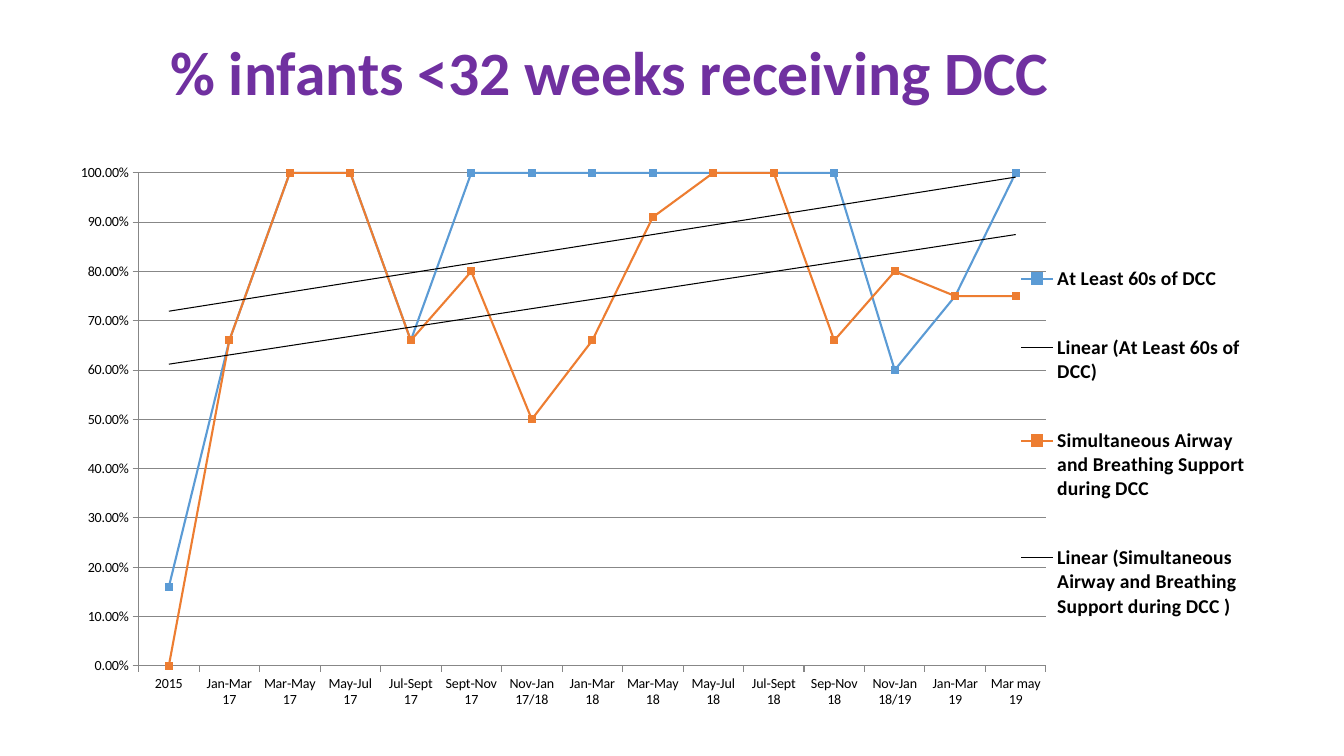
from lxml import etree
from pptx import Presentation
from pptx.chart.data import CategoryChartData
from pptx.dml.color import RGBColor
from pptx.enum.chart import XL_CHART_TYPE as ChartType
from pptx.enum.chart import XL_LEGEND_POSITION as LegendPosition
from pptx.enum.chart import XL_MARKER_STYLE as MarkerStyle
from pptx.enum.chart import XL_TICK_MARK as TickMark
from pptx.enum.text import MSO_ANCHOR as Anchor
from pptx.oxml import parse_xml
from pptx.oxml.ns import nsdecls, qn
from pptx.util import Inches, Pt

FONT = "Calibri"
COLORS = {
    "title": "7030A0",
    "text": "000000",
    "grid": "878787",
    "dcc": "5B9BD5",
    "support": "ED7D31",
}
PERIODS = [
    "2015", "Jan-Mar 17", "Mar-May 17", "May-Jul 17", "Jul-Sept 17",
    "Sept-Nov 17", "Nov-Jan 17/18", "Jan-Mar 18", "Mar-May 18", "May-Jul 18",
    "Jul-Sept 18", "Sep-Nov 18", "Nov-Jan 18/19", "Jan-Mar 19", "Mar may 19",
]
SERIES = [
    ("At Least 60s of DCC", "dcc",
     [0.16, 0.66, 1, 1, 0.66, 1, 1, 1, 1, 1, 1, 1, 0.6, 0.75, 1]),
    ("Simultaneous Airway and Breathing Support during DCC ", "support",
     [0, 0.66, 1, 1, 0.66, 0.8, 0.5, 0.66, 0.91, 1, 1, 0.66, 0.8, 0.75, 0.75]),
]


def color(name):
    return RGBColor.from_string(COLORS[name])


def set_font(font, size, name="text", bold=False):
    font.name = FONT
    font.size = Pt(size)
    font.bold = bold
    font.color.rgb = color(name)


def add_title(page, text):
    title = page.shapes.title
    title.left, title.top = Inches(1.26), Inches(0.36)
    title.width, title.height = Inches(9.58), Inches(0.77)
    title.text_frame.text = text
    title.text_frame.vertical_anchor = Anchor.MIDDLE
    para = title.text_frame.paragraphs[0]
    para.line_spacing = 0.9
    set_font(para.font, 44, "title", True)


def set_layout(element, x, y, width, height, inner=False):
    for old in element.findall(qn("c:layout")):
        element.remove(old)
    layout = etree.Element(qn("c:layout"))
    manual = etree.SubElement(layout, qn("c:manualLayout"))
    settings = [("layoutTarget", "inner")] if inner else []
    settings += [("xMode", "edge"), ("yMode", "edge"),
                 ("x", x), ("y", y), ("w", width), ("h", height)]
    for tag, value in settings:
        etree.SubElement(manual, qn(f"c:{tag}")).set("val", str(value))
    if inner:
        element.insert(0, layout)
    else:
        element.find(qn("c:legendPos")).addnext(layout)


def add_trend(series):
    trend = parse_xml(
        f'<c:trendline {nsdecls("c", "a")}><c:spPr><a:ln w="9525"><a:solidFill>'
        f'<a:srgbClr val="{COLORS["text"]}"/></a:solidFill></a:ln></c:spPr>'
        '<c:trendlineType val="linear"/><c:dispRSqr val="0"/>'
        '<c:dispEq val="0"/></c:trendline>')
    series._element.find(qn("c:cat")).addprevious(trend)


def style_series(series, name):
    series.smooth = False
    series.format.line.color.rgb = color(name)
    series.format.line.width = Pt(1.5)
    marker = series.marker
    marker.style = MarkerStyle.SQUARE
    marker.size = 5
    marker.format.fill.solid()
    marker.format.fill.fore_color.rgb = color(name)
    marker.format.line.color.rgb = color(name)
    add_trend(series)


def style_axis(axis):
    axis.major_tick_mark = TickMark.OUTSIDE
    axis.minor_tick_mark = TickMark.NONE
    axis.format.line.color.rgb = color("grid")
    set_font(axis.tick_labels.font, 10)


def add_line_chart(page):
    data = CategoryChartData(number_format="0.00%")
    data.categories = PERIODS
    for name, _, values in SERIES:
        data.add_series(name, values)
    chart = page.shapes.add_chart(
        ChartType.LINE_MARKERS, Inches(0.55), Inches(1.53),
        Inches(12.5), Inches(5.61), data).chart
    set_font(chart.font, 10)
    chart.has_title = False
    plot = chart.plots[0]
    plot.vary_by_categories = False
    for series, (_, name, _) in zip(plot.series, SERIES):
        style_series(series, name)

    style_axis(chart.category_axis)
    scale = chart.value_axis
    style_axis(scale)
    scale.minimum_scale, scale.maximum_scale = 0, 1
    scale.major_unit = 0.1
    scale.has_major_gridlines = True
    scale.major_gridlines.format.line.color.rgb = color("grid")
    scale.tick_labels.number_format = "0.00%"
    scale.tick_labels.number_format_is_linked = False

    chart.has_legend = True
    legend = chart.legend
    legend.position = LegendPosition.RIGHT
    legend.include_in_layout = False
    set_font(legend.font, 14, bold=True)
    set_layout(legend._element, 0.76, 0.12, 0.19, 0.78)
    plot_area = chart._chartSpace.chart.plotArea
    set_layout(plot_area, 0.066, 0.033, 0.72, 0.872, inner=True)


def main():
    deck = Presentation()
    deck.slide_width, deck.slide_height = Inches(13.33), Inches(7.5)
    page = deck.slides.add_slide(deck.slide_layouts[5])
    add_title(page, "% infants <32 weeks receiving DCC")
    add_line_chart(page)
    deck.save("out.pptx")


if __name__ == "__main__":
    main()
